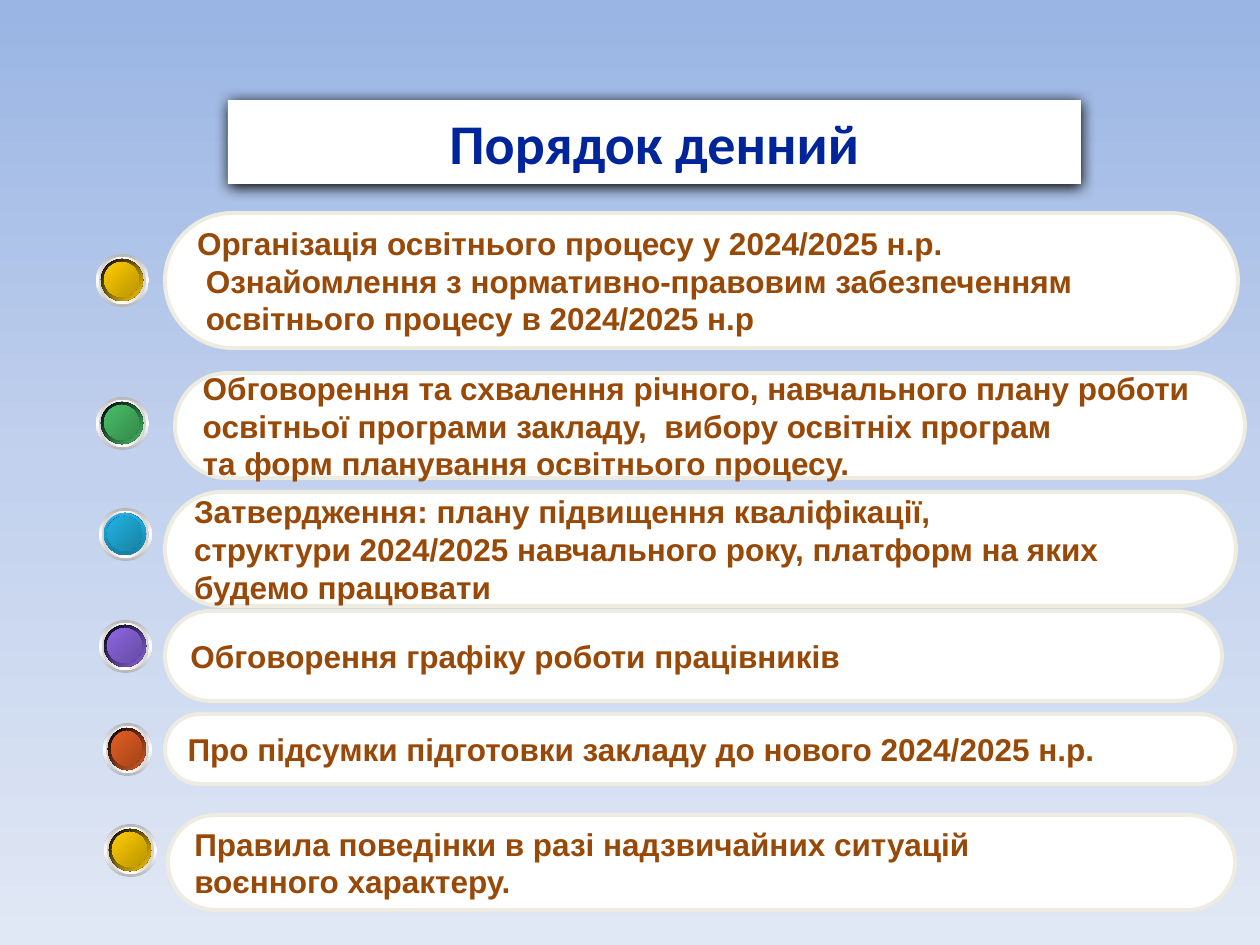
from lxml import etree
from pptx import Presentation
from pptx.dml.color import RGBColor
from pptx.enum.shapes import MSO_SHAPE
from pptx.enum.text import MSO_ANCHOR, MSO_AUTO_SIZE, PP_ALIGN
from pptx.oxml.ns import qn
from pptx.util import Pt

PILL, BALL = MSO_SHAPE.ROUNDED_RECTANGLE, MSO_SHAPE.OVAL
MIDDLE, LEFT, CENTER = MSO_ANCHOR.MIDDLE, PP_ALIGN.LEFT, PP_ALIGN.CENTER
NO_AUTOFIT = MSO_AUTO_SIZE.NONE

# Content: lines, pill box and ball box in px, ball colour and its dark end
TITLE = "Порядок денний"
TITLE_BOX = (228, 100, 853, 84)
AGENDA = [
    dict(lines=["Організація освітнього процесу у 2024/2025 н.р.",
                " Ознайомлення з нормативно-правовим забезпеченням",
                " освітнього процесу в 2024/2025 н.р"],
         pill=(165, 213, 1073, 135), ball=(96, 254, 53, 53),
         colour="FFCC00", dark="BA9500"),
    dict(lines=["Обговорення та схвалення річного, навчального плану роботи",
                "освітньої програми закладу,  вибору освітніх програм",
                "та форм планування освітнього процесу."],
         pill=(175, 373, 1070, 105), ball=(96, 397, 53, 53),
         colour="48BE67", dark="358B4B"),
    dict(lines=["Затвердження: плану підвищення кваліфікації,",
                "структури 2024/2025 навчального року, платформ на яких",
                "будемо працювати"],
         pill=(165, 492, 1071, 114), ball=(99, 508, 53, 53),
         colour="21B3E1", dark="1883A4", shade=(["21B3E1", "1880A1"], 90)),
    dict(lines=["Обговорення графіку роботи працівників"],
         pill=(165, 611, 1057, 90), ball=(99, 620, 53, 53),
         colour="8D67E1", dark="674BA4"),
    dict(lines=["Про підсумки підготовки закладу до нового 2024/2025 н.р."],
         pill=(165, 714, 1070, 70), ball=(103, 723, 49, 53),
         colour="E35E23", dark="A6451A"),
    dict(lines=["Правила поведінки в разі надзвичайних ситуацій",
                "воєнного характеру."],
         pill=(168, 815, 1067, 95), ball=(104, 824, 53, 53),
         colour="FFCC00", dark="BA9500"),
]

THEME = dict(
    background=["9AB5E4", "C2D1ED", "E1E8F5"],
    panel="FFFFFF", border="EEECE1", border_width=2.25, shadow="000000",
    title=dict(name="Calibri", size=32, colour="00259A"),
    item=dict(name="Arial", size=18, colour="984807"),
    rim=["B6B6B6", "FFFFFF", "B6B6B6"],
    inner_rim=["D1D1D1", "FFFFFF", "D1D1D1"],
    glow=["FFFFFF", "0000FF", "FFFFFF"],
    core=["0000C3", "0000FF", "0000C3"],
    black="000000",
)


def px(value):
    return value * 914400 // 126


def place(box):
    return [px(value) for value in box]


def set_gradient(fill, owner, colours, angle):
    """Spread the colours evenly; the angle runs clockwise in degrees."""
    fill.gradient()
    gradient = next(owner.iter(qn("a:gradFill")))
    for child in list(gradient):
        gradient.remove(child)
    stops = etree.SubElement(gradient, qn("a:gsLst"))
    for index, colour in enumerate(colours):
        position = 100000 * index // (len(colours) - 1)
        stop = etree.SubElement(stops, qn("a:gs"), pos=str(position))
        etree.SubElement(stop, qn("a:srgbClr"), val=colour)
    etree.SubElement(gradient, qn("a:lin"), ang=str(angle * 60000), scaled="0")


def set_solid(fill, colour):
    fill.solid()
    fill.fore_color.rgb = RGBColor.from_string(colour)


def write_lines(frame, lines, style, alignment, wrap):
    frame.auto_size = NO_AUTOFIT
    frame.word_wrap = wrap
    frame.vertical_anchor = MIDDLE
    for index, line in enumerate(lines):
        paragraph = frame.add_paragraph() if index else frame.paragraphs[0]
        paragraph.alignment = alignment
        run = paragraph.add_run()
        run.text = line
        run.font.name = style["name"]
        run.font.size = Pt(style["size"])
        run.font.bold = True
        run.font.color.rgb = RGBColor.from_string(style["colour"])


def add_title(slide):
    title = slide.shapes.title
    title.left, title.top, title.width, title.height = place(TITLE_BOX)
    set_solid(title.fill, THEME["panel"])
    effects = etree.SubElement(title.element.spPr, qn("a:effectLst"))
    shadow = etree.SubElement(effects, qn("a:outerShdw"), blurRad=str(Pt(8.5)),
                              dist=str(Pt(1)), dir="5400000", rotWithShape="0")
    etree.SubElement(shadow, qn("a:srgbClr"), val=THEME["shadow"])
    write_lines(title.text_frame, [TITLE], THEME["title"], CENTER, True)


def add_pill(slide, item):
    pill = slide.shapes.add_shape(PILL, *place(item["pill"]))
    pill.adjustments[0] = 0.5
    pill.shadow.inherit = False
    set_solid(pill.fill, THEME["panel"])
    set_solid(pill.line.fill, THEME["border"])
    pill.line.width = Pt(THEME["border_width"])
    write_lines(pill.text_frame, item["lines"], THEME["item"], LEFT, False)


def add_ball(slide, item):
    left, top, width, height = item["ball"]
    shade, shade_angle = item.get("shade", ([THEME["black"], item["colour"]], 45))
    # Offset and shrink in px, colours, angle; from the rim to the face
    layers = [
        (0, 0, THEME["rim"], 90),
        (3, 6, THEME["inner_rim"], 0),
        (5, 11, THEME["glow"], 45),
        (5, 11, shade, shade_angle),
        (8, 18, THEME["core"], 315),
        (8, 18, [item["colour"], item["dark"]], 45),
    ]
    group = slide.shapes.add_group_shape()
    for offset, shrink, colours, angle in layers:
        box = (left + offset, top + offset, width - shrink, height - shrink)
        disc = group.shapes.add_shape(BALL, *place(box))
        disc.shadow.inherit = False
        disc.line.fill.background()
        set_gradient(disc.fill, disc.element, colours, angle)


def main():
    presentation = Presentation()
    presentation.slide_width, presentation.slide_height = px(1260), px(945)
    slide = presentation.slides.add_slide(presentation.slide_layouts[5])
    set_gradient(slide.background.fill, slide.element, THEME["background"], 90)
    add_title(slide)
    for item in AGENDA:
        add_pill(slide, item)
        add_ball(slide, item)
    presentation.save("out.pptx")


if __name__ == "__main__":
    main()
